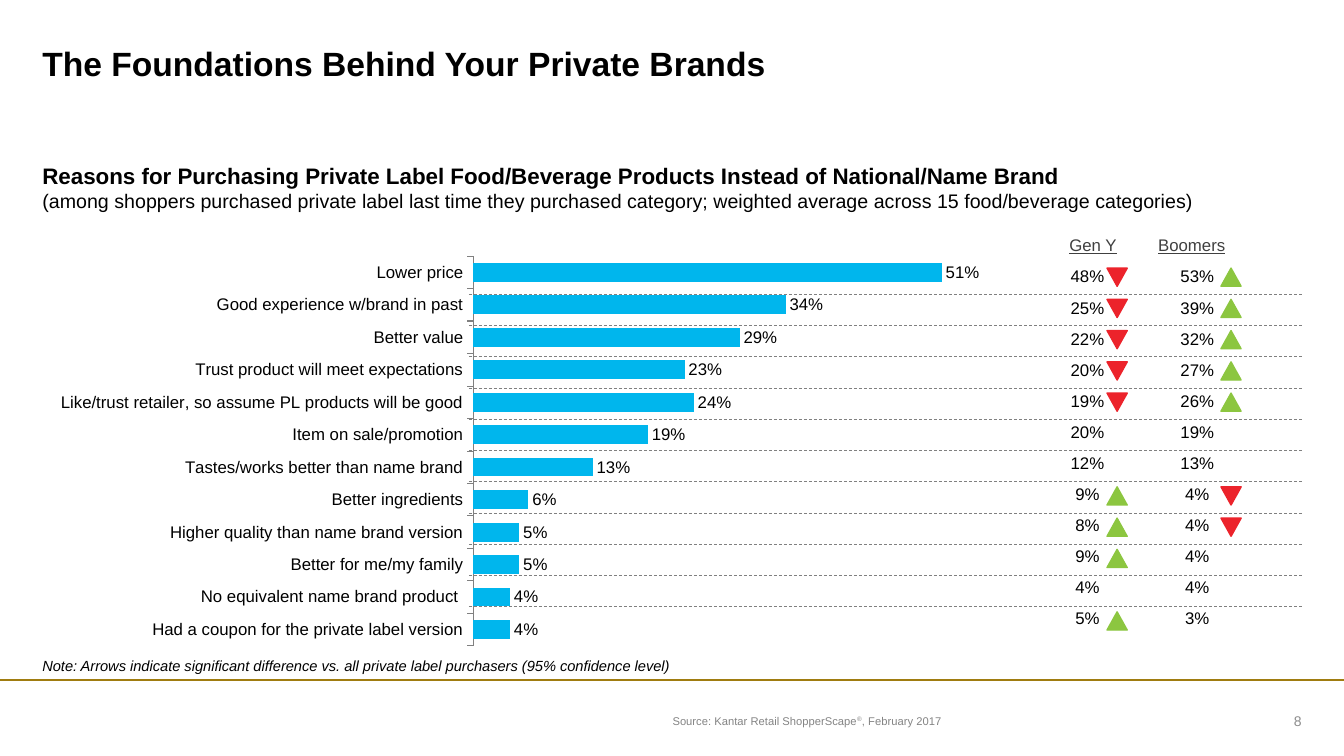
from lxml import etree
from pptx import Presentation
from pptx.chart.data import CategoryChartData
from pptx.dml.color import RGBColor
from pptx.enum import chart as charts, dml, shapes, text
from pptx.oxml import parse_xml
from pptx.oxml.ns import nsdecls, qn
from pptx.util import Inches, Pt

BLACK = RGBColor(0x00, 0x00, 0x00)
CHARCOAL = RGBColor(0x40, 0x40, 0x40)
GRAY = RGBColor(0x80, 0x80, 0x80)
SOURCE_GRAY = RGBColor(0x84, 0x84, 0x84)
NUMBER_GRAY = RGBColor(0x8C, 0x8C, 0x8C)
GOLD = RGBColor(0xA0, 0x7C, 0x10)
BLUE = RGBColor(0x00, 0xB6, 0xED)
GREEN = RGBColor(0x8C, 0xC6, 0x40)
RED = RGBColor(0xEC, 0x23, 0x2B)

# Reason, all shoppers, then Gen Y and Boomers in percent with their arrows
REASONS = [
    ("Lower price", 0.51, (48, "down"), (53, "up")),
    ("Good experience w/brand in past", 0.34, (25, "down"), (39, "up")),
    ("Better value", 0.29, (22, "down"), (32, "up")),
    ("Trust product will meet expectations", 0.23, (20, "down"), (27, "up")),
    ("Like/trust retailer, so assume PL products will be good", 0.24, (19, "down"), (26, "up")),
    ("Item on sale/promotion", 0.19, (20, None), (19, None)),
    ("Tastes/works better than name brand", 0.13, (12, None), (13, None)),
    ("Better ingredients", 0.06, (9, "up"), (4, "down")),
    ("Higher quality than name brand version", 0.05, (8, "up"), (4, "down")),
    ("Better for me/my family", 0.05, (9, "up"), (4, None)),
    ("No equivalent name brand product ", 0.04, (4, None), (4, None)),
    ("Had a coupon for the private label version", 0.04, (5, "up"), (3, None)),
]
ROW_STEP = 0.31

presentation = Presentation()
presentation.slide_width = Inches(13.33)
presentation.slide_height = Inches(7.5)
slide = presentation.slides.add_slide(presentation.slide_layouts[1])


def write(shape, box, lines, color, anchor=text.MSO_ANCHOR.TOP, align=text.PP_ALIGN.LEFT):
    """Place a text shape and fill it with (text, size, bold) lines."""
    shape.left, shape.top, shape.width, shape.height = map(Inches, box)
    frame = shape.text_frame
    frame.margin_left = frame.margin_top = frame.margin_right = frame.margin_bottom = 0
    frame.word_wrap = True
    frame.auto_size = text.MSO_AUTO_SIZE.NONE
    frame.vertical_anchor = anchor
    frame.text = "\n".join(line[0] for line in lines)
    for paragraph, (_, size, bold) in zip(frame.paragraphs, lines):
        paragraph.alignment = align
        paragraph.space_before = Pt(0)
        paragraph.font.name = "Arial"
        paragraph.font.size = Pt(size)
        paragraph.font.bold = bold
        paragraph.font.color.rgb = color
    return frame.paragraphs[0]


def add_line(left, right, y, color, width):
    """Draw a horizontal line."""
    line = slide.shapes.add_connector(
        shapes.MSO_CONNECTOR.STRAIGHT, Inches(left), Inches(y), Inches(right), Inches(y))
    line.line.color.rgb = color
    line.line.width = Pt(width)
    etree.SubElement(line._element.spPr, qn("a:effectLst"))
    return line


# Title, source and footer
write(slide.shapes.title, (0.42, 0.43, 12.5, 0.44),
      [("The Foundations Behind Your Private Brands", 24, True)], BLACK)
source = slide.placeholders[1]
paragraph = write(source, (6.67, 7.05, 5.1, 0.2),
                  [("Source: Kantar Retail ShopperScape", 8, False)], SOURCE_GRAY,
                  text.MSO_ANCHOR.MIDDLE)
properties = paragraph._p.get_or_add_pPr()
properties.set("marL", "0")
properties.set("indent", "0")
spacing = properties.find(qn("a:spcBef"))
spacing.addnext(parse_xml(f"<a:buNone {nsdecls('a')}/>"))
registered = paragraph.add_run()
registered.text = "®"
registered.font._element.set("baseline", "30000")
paragraph.add_run().text = ", February 2017"
add_line(0, 13.33, 6.75, GOLD, 1.5)
write(slide.shapes.add_textbox(0, 0, 0, 0), (11.88, 7.05, 1.03, 0.2), [("8", 10, False)],
      NUMBER_GRAY, text.MSO_ANCHOR.MIDDLE, text.PP_ALIGN.RIGHT)

# Chart heading and note
write(slide.shapes.add_textbox(0, 0, 0, 0), (0.42, 1.61, 12.49, 0.5), [
    ("Reasons for Purchasing Private Label Food/Beverage Products Instead of "
     "National/Name Brand", 16, True),
    ("(among shoppers purchased private label last time they purchased category; "
     "weighted average across 15 food/beverage categories)", 14, False)], BLACK)
note = write(slide.shapes.add_textbox(0, 0, 0, 0), (0.42, 6.52, 10.43, 0.18),
             [("Note: Arrows indicate significant difference vs. all private label "
               "purchasers (95% confidence level)", 10.5, False)], BLACK)
note.font.italic = True

# Bar chart of reasons
chart_data = CategoryChartData(number_format="0%")
chart_data.categories = [reason[0] for reason in REASONS]
chart_data.add_series("Series 1", [reason[1] for reason in REASONS])
chart = slide.shapes.add_chart(
    charts.XL_CHART_TYPE.BAR_CLUSTERED, Inches(0.42), Inches(2.46), Inches(9.94), Inches(4.03),
    chart_data).chart
chart.has_legend = False
chart.has_title = False
chart.font.name = "Arial"
chart.font.size = Pt(12)
chart.font.color.rgb = BLACK
category_axis = chart.category_axis
category_axis.reverse_order = True
category_axis.has_major_gridlines = False
category_axis.major_tick_mark = charts.XL_TICK_MARK.OUTSIDE
category_axis.format.line.color.rgb = GRAY
value_axis = chart.value_axis
value_axis.visible = False
value_axis.has_major_gridlines = False
value_axis.minimum_scale = 0
value_axis.maximum_scale = 0.6
plot = chart.plots[0]
plot.gap_width = 75
plot.vary_by_categories = False
bars = plot.series[0]
bars.format.fill.solid()
bars.format.fill.fore_color.rgb = BLUE
plot.has_data_labels = True
labels = plot.data_labels
labels.show_value = True
labels.number_format = "0%"
labels.number_format_is_linked = False
labels.position = charts.XL_LABEL_POSITION.OUTSIDE_END

# Fixed plot area, so that bars line up with the table rows
plot_area = chart._chartSpace.chart.plotArea
for old_layout in plot_area.findall(qn("c:layout")):
    plot_area.remove(old_layout)
plot_area.insert(0, parse_xml(
    f'<c:layout {nsdecls("c")}><c:manualLayout><c:layoutTarget val="inner"/>'
    '<c:xMode val="edge"/><c:yMode val="edge"/><c:x val="0.43"/><c:y val="0.02"/>'
    '<c:w val="0.55"/><c:h val="0.96"/></c:manualLayout></c:layout>'))

# Table of generations
table = slide.shapes.add_table(len(REASONS), 2, Inches(10.24), Inches(2.59),
                               Inches(2.18), Inches(3.7)).table
table.first_row = False
table.horz_banding = False
for row, reason in enumerate(REASONS):
    for column, (percent, _) in enumerate(reason[2:]):
        cell = table.cell(row, column)
        cell.fill.background()
        cell.margin_left = cell.margin_top = cell.margin_right = Inches(0.01)
        cell.margin_bottom = 0
        cell.vertical_anchor = text.MSO_ANCHOR.MIDDLE
        cell.text = f"{percent}%"
        paragraph = cell.text_frame.paragraphs[0]
        paragraph.alignment = text.PP_ALIGN.CENTER
        paragraph.font.name = "Arial"
        paragraph.font.size = Pt(12)
        paragraph.font.color.rgb = BLACK

# Column headings
for generation, left, width in (("Gen Y", 10.38, 0.92), ("Boomers", 11.38, 0.88)):
    heading = write(slide.shapes.add_textbox(0, 0, 0, 0), (left, 2.25, width, 0.28),
                    [(generation, 12, False)], CHARCOAL, text.MSO_ANCHOR.BOTTOM,
                    text.PP_ALIGN.CENTER)
    heading.font.underline = True

# Dashed row separators
for row in range(len(REASONS) - 1):
    separator = add_line(4.65, 12.93, 2.92 + row * ROW_STEP, GRAY, 0.5)
    separator.line.dash_style = dml.MSO_LINE.DASH

# Significance arrows
for row, reason in enumerate(REASONS):
    for left, (_, direction) in zip((10.98, 12.11), reason[2:]):
        if direction is None:
            continue
        arrow = slide.shapes.add_shape(
            shapes.MSO_SHAPE.ISOSCELES_TRIANGLE, Inches(left), Inches(2.66 + row * ROW_STEP),
            Inches(0.2), Inches(0.18))
        color = GREEN if direction == "up" else RED
        arrow.rotation = 0 if direction == "up" else 180
        arrow.shadow.inherit = False
        arrow.fill.solid()
        arrow.fill.fore_color.rgb = color
        arrow.line.color.rgb = color
        arrow.line.width = Pt(1)

presentation.save("out.pptx")
